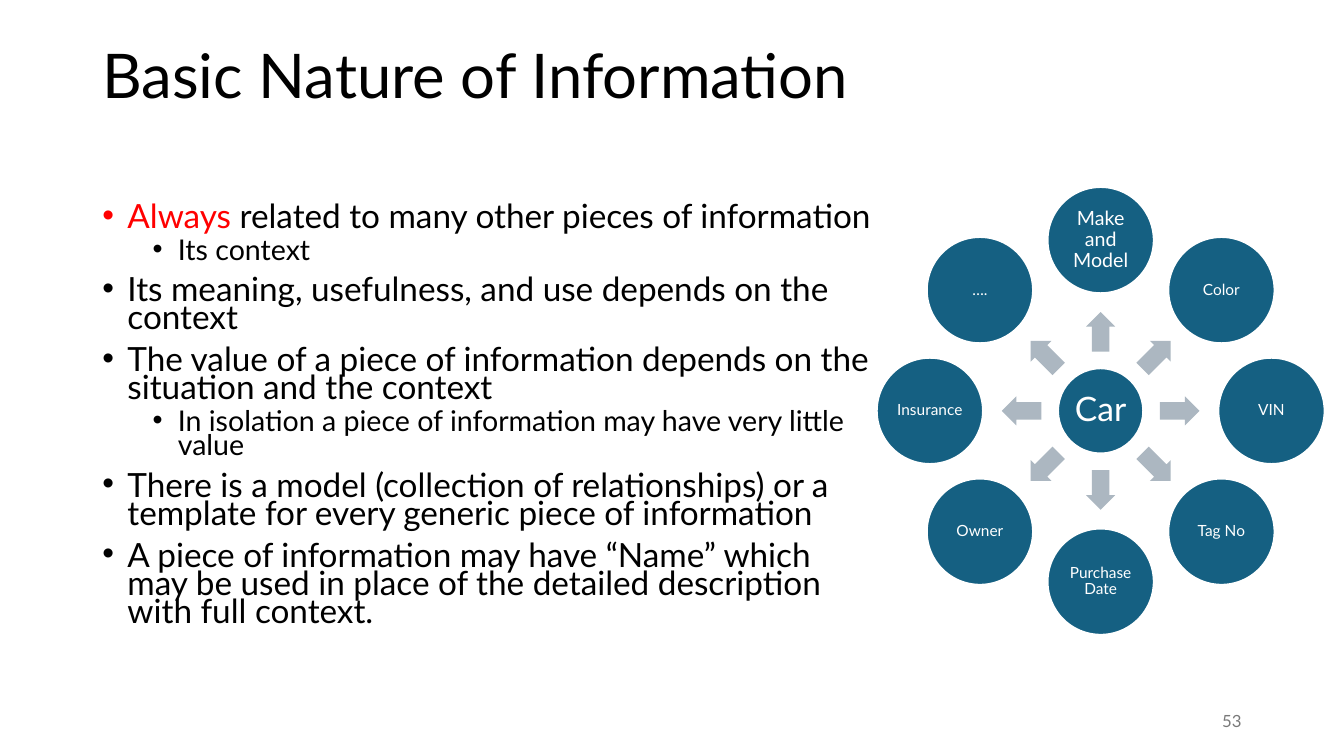
import math
import lxml.etree
import pptx
import pptx.dml.color
import pptx.enum.shapes
import pptx.enum.text
import pptx.oxml.ns
import pptx.util

Pt = pptx.util.Pt
SHAPE = pptx.enum.shapes.MSO_SHAPE
ALIGN = pptx.enum.text.PP_ALIGN
ANCHOR = pptx.enum.text.MSO_ANCHOR
COLORS = {"text": "000000", "accent": "FF0000", "node": "156082",
          "arrow": "ACB7C1", "white": "FFFFFF", "number": "797979"}


def rgb(name):
    return pptx.dml.color.RGBColor.from_string(COLORS[name])


def apply(obj, values):
    for name, value in values.items():
        setattr(obj, name, value)


class SlideBuilder:
    font = "Lato"

    def __init__(self, slide):
        self.slide = slide

    def run(self, p, text, size, color):
        r = p.add_run()
        r.text = text
        apply(r.font, {"name": self.font, "size": Pt(size)})
        r.font.color.rgb = rgb(color)

    def frame(self, box, anchor):
        sp = self.slide.shapes.add_textbox(*map(Pt, box))
        apply(sp.text_frame, {"word_wrap": True, "vertical_anchor": anchor})
        return sp.text_frame

    def label(self, box, text, size, color, anchor, **fmt):
        p = self.frame(box, anchor).paragraphs[0]
        apply(p, fmt)
        self.run(p, text, size, color)

    def bullets(self, box, items):
        tf = self.frame(box, ANCHOR.TOP)
        for i, (level, runs) in enumerate(items):
            p = tf.add_paragraph() if i else tf.paragraphs[0]
            apply(p, {"level": level, "line_spacing": 0.7,
                      "space_before": Pt(5 if level else 10)})
            pPr = p._p.get_or_add_pPr()
            pPr.set("marL", str(Pt(18 + 36 * level)))
            pPr.set("indent", str(Pt(-18)))
            for tag, key, value in (("a:buFont", "typeface", "Arial"),
                                    ("a:buChar", "char", "•")):
                bullet = lxml.etree.SubElement(pPr, pptx.oxml.ns.qn(tag))
                bullet.set(key, value)
            for text, color in runs:
                self.run(p, text, 20.4 if level else 23.8, color)

    def shape(self, kind, cx, cy, w, h, fill):
        sp = self.slide.shapes.add_shape(
            kind, Pt(cx - w / 2), Pt(cy - h / 2), Pt(w), Pt(h))
        sp.shadow.inherit = False
        sp.fill.solid()
        sp.fill.fore_color.rgb = rgb(fill)
        return sp

    def node(self, cx, cy, d, text, size):
        sp = self.shape(SHAPE.OVAL, cx, cy, d, d, "node")
        sp.line.color.rgb = rgb("white")
        sp.line.width = Pt(1.5)
        tf = sp.text_frame
        apply(tf, {"word_wrap": True, "vertical_anchor": ANCHOR.MIDDLE})
        apply(tf, dict.fromkeys(("margin_left", "margin_right", "margin_top",
                                 "margin_bottom"), Pt(1.5)))
        p = tf.paragraphs[0]
        apply(p, {"alignment": ALIGN.CENTER, "line_spacing": 0.9})
        self.run(p, text, size, "white")

    def arrow(self, cx, cy, angle):
        sp = self.shape(SHAPE.RIGHT_ARROW, cx, cy, 28.3, 20.8, "arrow")
        sp.line.fill.background()
        sp.adjustments[0] = 0.6
        sp.adjustments[1] = 0.5
        sp.rotation = angle % 360

    def wheel(self, cx, cy, hub, spokes):
        self.node(cx, cy, 61, hub, 24)
        for i, (text, size) in enumerate(spokes):
            angle = -90 + i * 360 / len(spokes)
            dx, dy = math.cos(math.radians(angle)), math.sin(math.radians(angle))
            self.arrow(cx + 56.5 * dx, cy + 56.5 * dy, angle)
            self.node(cx + 122 * dx, cy + 122 * dy, 76, text, size)


BODY = [
    (0, [("Always", "accent"),
         (" related to many other pieces of information", "text")]),
    (1, [("Its context", "text")]),
    (0, [("Its meaning, usefulness, and use depends on the context", "text")]),
    (0, [("The value of a piece of information depends on the situation "
          "and the context", "text")]),
    (1, [("In isolation a piece of information may have very little value", "text")]),
    (0, [("There is a model (collection of relationships) or a template "
          "for every generic piece of information", "text")]),
    (0, [("A piece of information may have “Name” which may be used in place "
          "of the detailed description with full context.", "text")]),
]
SPOKES = [("Make and Model", 14), ("Color", 11), ("VIN", 11), ("Tag No", 11),
          ("Purchase Date", 11), ("Owner", 11), ("Insurance", 11), ("….", 11)]


def main():
    prs = pptx.Presentation()
    apply(prs, {"slide_width": Pt(960), "slide_height": Pt(540)})
    s = SlideBuilder(prs.slides.add_slide(prs.slide_layouts[6]))
    s.label((66, 28.8, 828, 104.4), "Basic Nature of Information", 44, "text",
            ANCHOR.TOP, line_spacing=0.9)
    s.bullets((66, 144, 568, 346), BODY)
    s.wheel(786.2, 293.5, "Car", SPOKES)
    s.label((678, 500.4, 216, 28.8), "53", 12, "number", ANCHOR.MIDDLE,
            alignment=ALIGN.RIGHT)
    prs.save("out.pptx")


if __name__ == "__main__":
    main()
